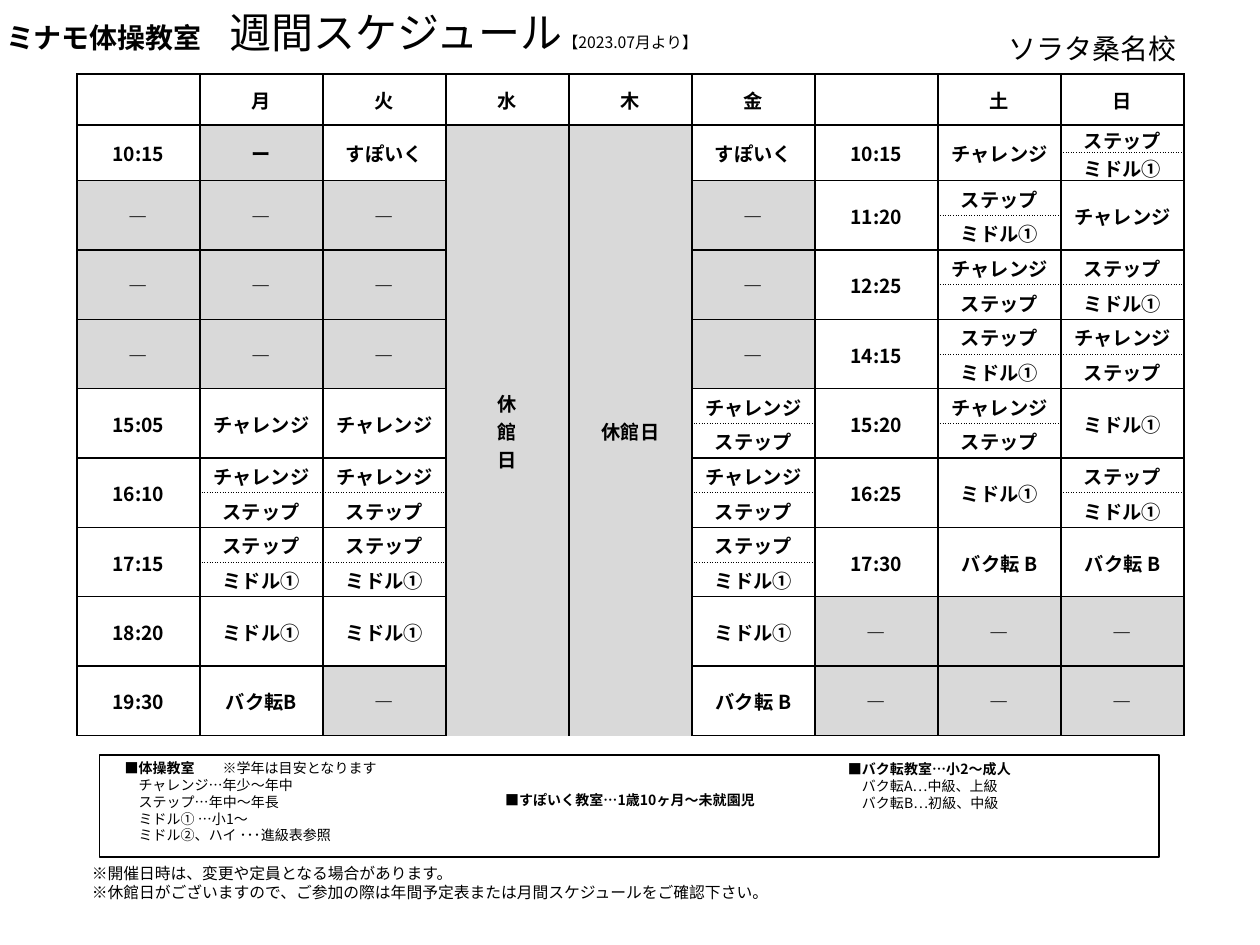
from dataclasses import dataclass

from lxml.etree import SubElement
from pptx import Presentation
from pptx.dml.color import RGBColor
from pptx.enum.shapes import MSO_SHAPE
from pptx.enum.text import MSO_ANCHOR, MSO_AUTO_SIZE, PP_ALIGN
from pptx.oxml.ns import qn
from pptx.util import Pt


@dataclass(frozen=True)
class Theme:
    font: str = "Noto Sans CJK JP"
    ink: str = "000000"
    open: str = "FFFFFF"
    closed: str = "D9D9D9"
    heading: int = 24
    school: int = 16
    cell: int = 11
    note: int = 9
    legend: int = 8
    solid: float = 1
    dotted: float = 0.5


THEME = Theme()

DAYS = ["", "月", "火", "水", "木", "金", "", "土", "日"]
COLUMN_WIDTH = 70.3
HEADER_HEIGHT, FIRST_HALF, HALF, FULL = 29.2, 15.86, 19.83, 39.7
PAIRED_SLOTS, SINGLE_SLOTS = 7, 2
ROW_HEIGHTS = ([HEADER_HEIGHT] + [FIRST_HALF] * 2
               + [HALF] * 2 * (PAIRED_SLOTS - 1) + [FULL] * SINGLE_SLOTS)

OPEN_COLUMNS = [0, 1, 2, 5, 6, 7, 8]
CLOSED_COLUMNS = {3: ["休", "館", "日"], 4: ["休館日"]}
VERTICAL_COLUMN = 4
NO_CLASS = ("ー", "―")
# One row per time slot, one entry per open column; "/" splits a slot in two.
SLOTS = [
    ["10:15", "ー", "すぽいく", "すぽいく", "10:15", "チャレンジ", "ステップ/ミドル①"],
    ["―", "―", "―", "―", "11:20", "ステップ/ミドル①", "チャレンジ"],
    ["―", "―", "―", "―", "12:25", "チャレンジ/ステップ", "ステップ/ミドル①"],
    ["―", "―", "―", "―", "14:15", "ステップ/ミドル①", "チャレンジ/ステップ"],
    ["15:05", "チャレンジ", "チャレンジ", "チャレンジ/ステップ", "15:20",
     "チャレンジ/ステップ", "ミドル①"],
    ["16:10", "チャレンジ/ステップ", "チャレンジ/ステップ", "チャレンジ/ステップ", "16:25",
     "ミドル①", "ステップ/ミドル①"],
    ["17:15", "ステップ/ミドル①", "ステップ/ミドル①", "ステップ/ミドル①", "17:30",
     "バク転 B", "バク転 B"],
    ["18:20", "ミドル①", "ミドル①", "ミドル①", "―", "―", "―"],
    ["19:30", "バク転B", "―", "バク転 B", "―", "―", "―"],
]


def style_font(font, size, bold):
    font.size = Pt(size)
    font.bold = bold
    font.color.rgb = RGBColor.from_string(THEME.ink)
    font.name = THEME.font
    SubElement(font._rPr, qn("a:ea"), typeface=THEME.font)


def add_text(slide, left, top, width, height, paragraphs):
    """Add a text box; each paragraph is a list of (text, size, bold) runs."""
    box = slide.shapes.add_textbox(Pt(left), Pt(top), Pt(width), Pt(height))
    frame = box.text_frame
    frame.word_wrap = True
    frame.auto_size = MSO_AUTO_SIZE.SHAPE_TO_FIT_TEXT
    for index, runs in enumerate(paragraphs):
        paragraph = frame.paragraphs[0] if index == 0 else frame.add_paragraph()
        uniform = len({run[1:] for run in runs}) == 1
        if uniform:
            style_font(paragraph.font, *runs[0][1:])
        for text, size, bold in runs:
            run = paragraph.add_run()
            run.text = text
            if not uniform:
                style_font(run.font, size, bold)
    return frame


def add_legend(slide, left, top, width, height, title, details=(), remark=None, tab=0):
    """Add a bold title, an optional remark at a tab stop and indented details."""
    heading = [(f"■{title}", THEME.legend, True)]
    if remark:
        heading.append((f"\t{remark}", THEME.legend, False))
    rows = [heading] + [[(detail, THEME.legend, False)] for detail in details]
    first, *rest = add_text(slide, left, top, width, height, rows).paragraphs
    if remark:
        stops = SubElement(first._p.get_or_add_pPr(), qn("a:tabLst"))
        SubElement(stops, qn("a:tab"), pos=str(Pt(tab)), algn="l")
    for paragraph in rest:
        properties = paragraph._p.get_or_add_pPr()
        properties.set("marL", str(Pt(THEME.legend)))
        properties.set("indent", "0")


def set_border(cell, side, style):
    """Draw one side (L, R, T or B) as solid, dotted or none."""
    width = THEME.dotted if style == "dotted" else THEME.solid
    line = SubElement(cell._tc.get_or_add_tcPr(), qn(f"a:ln{side}"), w=str(Pt(width)))
    if style == "none":
        SubElement(line, qn("a:noFill"))
        return
    fill = SubElement(line, qn("a:solidFill"))
    SubElement(fill, qn("a:srgbClr"), val=THEME.ink)
    SubElement(line, qn("a:prstDash"), val="sysDot" if style == "dotted" else "solid")


def write_cell(cell, lines, fill, top="solid", bottom="solid"):
    cell.margin_left = cell.margin_right = cell.margin_top = Pt(0.7)
    cell.margin_bottom = 0
    cell.vertical_anchor = MSO_ANCHOR.MIDDLE
    for side, style in zip("LRTB", ("solid", "solid", top, bottom)):
        set_border(cell, side, style)
    cell.fill.solid()
    cell.fill.fore_color.rgb = RGBColor.from_string(fill)
    cell.text = "\n".join(lines)
    for paragraph in cell.text_frame.paragraphs:
        paragraph.alignment = PP_ALIGN.CENTER
        style_font(paragraph.font, THEME.cell, True)
        if not paragraph.runs:
            SubElement(paragraph._p, qn("a:endParaRPr"), sz=str(THEME.cell * 100))


def write_block(table, row, column, height, entries, fill):
    """Fill a run of rows: one merged entry, or one entry a row with dotted lines between."""
    merged = len(entries) == 1
    inner = "none" if merged else "dotted"
    for offset in range(height):
        lines = entries[offset] if offset < len(entries) else []
        write_cell(table.cell(row + offset, column), lines, fill,
                   top="solid" if offset == 0 else inner,
                   bottom="solid" if offset == height - 1 else inner)
    if merged and height > 1:
        table.cell(row, column).merge(table.cell(row + height - 1, column))


def add_timetable(slide, left, top):
    frame = slide.shapes.add_table(
        len(ROW_HEIGHTS), len(DAYS), Pt(left), Pt(top),
        Pt(COLUMN_WIDTH * len(DAYS)), Pt(sum(ROW_HEIGHTS)))
    table = frame.table
    table.first_row = table.horz_banding = False
    for column in table.columns:
        column.width = Pt(COLUMN_WIDTH)
    for row, height in zip(table.rows, ROW_HEIGHTS):
        row.height = Pt(height)

    for column, day in enumerate(DAYS):
        write_cell(table.cell(0, column), [day], THEME.open)
    for column, lines in CLOSED_COLUMNS.items():
        write_block(table, 1, column, len(ROW_HEIGHTS) - 1, [lines], THEME.closed)
    table.cell(1, VERTICAL_COLUMN)._tc.get_or_add_tcPr().set("vert", "eaVert")

    row = 1
    for index, slot in enumerate(SLOTS):
        height = 2 if index < PAIRED_SLOTS else 1
        for column, text in zip(OPEN_COLUMNS, slot):
            fill = THEME.closed if text in NO_CLASS else THEME.open
            entries = [[entry] for entry in text.split("/")]
            write_block(table, row, column, height, entries, fill)
        row += height


def add_frame(slide, left, top, width, height):
    shape = slide.shapes.add_shape(
        MSO_SHAPE.RECTANGLE, Pt(left), Pt(top), Pt(width), Pt(height))
    shape.shadow.inherit = False
    shape.fill.background()
    shape.line.color.rgb = RGBColor.from_string(THEME.ink)
    shape.line.width = Pt(THEME.solid)


def main():
    presentation = Presentation()
    presentation.slide_width, presentation.slide_height = Pt(720), Pt(540)
    slide = presentation.slides.add_slide(presentation.slide_layouts[6])

    add_text(slide, -3.6, 0, 471, 36, [[
        ("ミナモ体操教室　", THEME.school, True),
        ("週間スケジュール", THEME.heading, False),
        ("【2023.07月より】", THEME.note, False)]])
    add_text(slide, 569.5, 14.4, 114, 26.6, [[("ソラタ桑名校", THEME.school, False)]])
    add_text(slide, 45.4, 490.3, 494.6, 28.8, [
        [("※開催日時は、変更や定員となる場合があります。", THEME.note, False)],
        [("※休館日がございますので、ご参加の際は年間予定表または月間スケジュールをご確認下さい。",
          THEME.note, False)]])

    add_frame(slide, 56.9, 431.3, 605.5, 58.3)
    add_legend(slide, 281.5, 448.6, 157.7, 38.9, "すぽいく教室…1歳10ヶ月～未就園児")
    add_legend(slide, 64.1, 430.6, 206, 55.4, "体操教室",
               ["チャレンジ…年少～年中", "ステップ…年中～年長", "ミドル① …小1～",
                "ミドル②、ハイ ･･･進級表参照"],
               remark="※学年は目安となります", tab=56)
    add_timetable(slide, 43.9, 42.3)
    add_legend(slide, 477.4, 431.3, 206, 36, "バク転教室…小2～成人",
               ["バク転A…中級、上級", "バク転B…初級、中級"])

    presentation.save("out.pptx")


if __name__ == "__main__":
    main()
